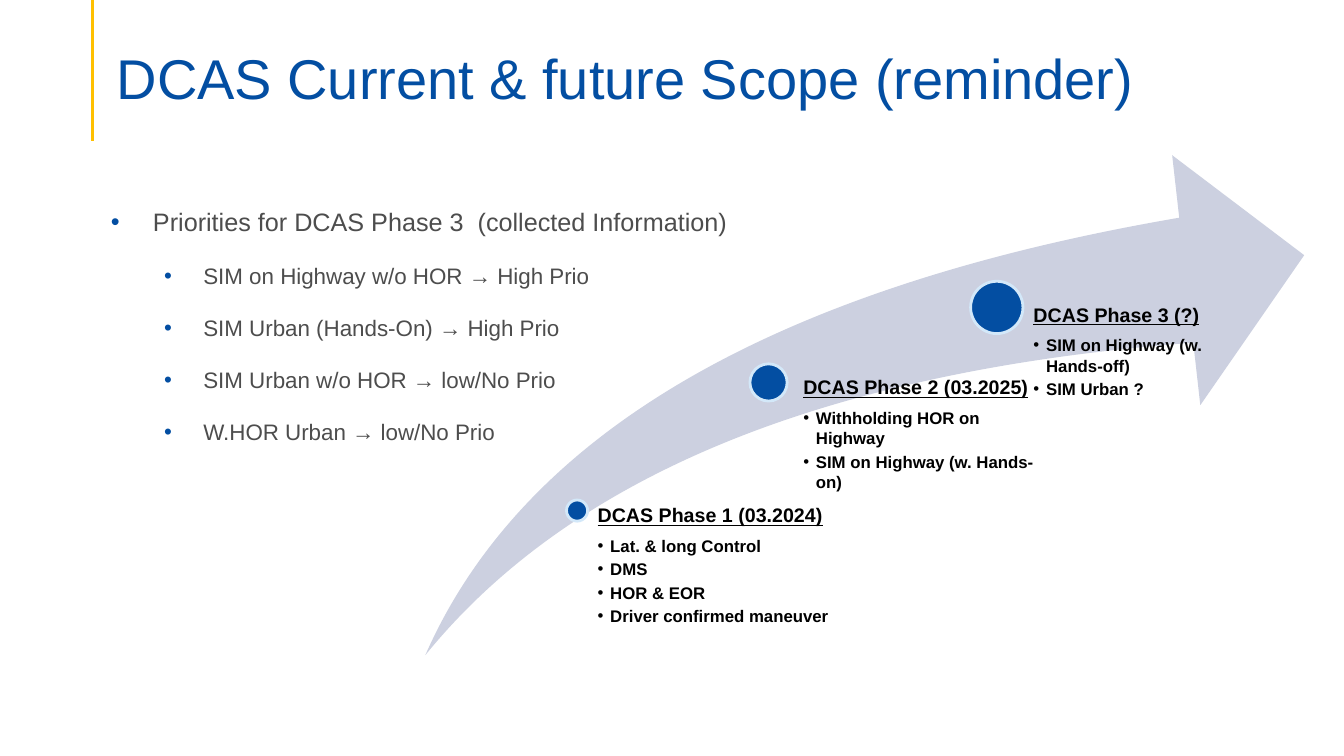
import pptx
import pptx.util
import pptx.dml.color
import pptx.enum.shapes
import pptx.enum.text
import lxml.etree

Pt = pptx.util.Pt
SHAPE = pptx.enum.shapes.MSO_SHAPE
ANCHOR = pptx.enum.text.MSO_ANCHOR

THEME = {
    "font": "Arial",
    "blue": "034EA2", "gold": "FFC000", "gray": "4D4D4D",
    "black": "000000", "swoosh": "CCD0E0", "dot_line": "D3E8F9",
    "title": 40, "body": 18, "sub": 16, "phase": 14, "item": 12,
}

TITLE = "DCAS Current & future Scope (reminder)"
HEADING = "Priorities for DCAS Phase 3  (collected Information)"
PRIORITIES = [
    "SIM on Highway w/o HOR → High Prio",
    "SIM Urban (Hands-On) → High Prio",
    "SIM Urban w/o HOR → low/No Prio",
    "W.HOR Urban → low/No Prio",
]
PHASES = [
    {"name": "DCAS Phase 1 (03.2024)",
     "items": ["Lat. & long Control", "DMS", "HOR & EOR", "Driver confirmed maneuver"],
     "dot": (412.2, 364.7, 15.1), "box": (419, 361.4, 175, 103), "inset": 7.9},
    {"name": "DCAS Phase 2 (03.2025)",
     "items": ["Withholding HOR on Highway", "SIM on Highway (w. Hands-on)"],
     "dot": (549, 273.2, 26.6), "box": (559.4, 270, 179.3, 194.4), "inset": 14.4},
    {"name": "DCAS Phase 3 (?)",
     "items": ["SIM on Highway (w. Hands-off)", "SIM Urban ?"],
     "dot": (712, 219.6, 37.4), "box": (718.6, 218.2, 147.6, 102.2), "inset": 19.6},
]


def rgb(name):
    return pptx.dml.color.RGBColor.from_string(THEME[name])


def child(parent, tag, **attrs):
    return lxml.etree.SubElement(parent, pptx.oxml.ns.qn(tag), attrs)


def add_box(s, at, insets, anchor=ANCHOR.TOP):
    tf = s.shapes.add_textbox(*map(Pt, at)).text_frame
    tf.word_wrap = True
    tf.vertical_anchor = anchor
    tf.margin_left, tf.margin_top, tf.margin_right, tf.margin_bottom = map(Pt, insets)
    return tf


def add_text(tf, text, size, color, bold=False, underline=False, first=False,
             before=0, after=0, spacing=1.0, bullet=None):
    p = tf.paragraphs[0] if first else tf.add_paragraph()
    p.space_before, p.space_after, p.line_spacing = Pt(before), Pt(after), spacing
    if bullet:
        left, hang, bullet_color = bullet
        pPr = p._p.get_or_add_pPr()
        pPr.set("marL", str(Pt(left)))
        pPr.set("indent", str(-Pt(hang)))
        child(child(pPr, "a:buClr"), "a:srgbClr", val=THEME[bullet_color])
        child(pPr, "a:buFont", typeface=THEME["font"])
        child(pPr, "a:buChar", char="•")
    r = p.add_run()
    r.text = text
    r.font.name = THEME["font"]
    r.font.size = Pt(THEME[size])
    r.font.bold = bold
    r.font.underline = underline
    r.font.color.rgb = rgb(color)


def add_shape(s, kind, at, fill, line=None):
    sp = s.shapes.add_shape(kind, *map(Pt, at))
    sp.shadow.inherit = False
    sp.fill.solid()
    sp.fill.fore_color.rgb = rgb(fill)
    if line:
        sp.line.color.rgb = rgb(line)
        sp.line.width = Pt(2)
    else:
        sp.line.fill.background()
    return sp


def main():
    prs = pptx.Presentation()
    prs.slide_width, prs.slide_height = Pt(960), Pt(540)
    s = prs.slides.add_slide(prs.slide_layouts[6])

    rule = s.shapes.add_connector(pptx.enum.shapes.MSO_CONNECTOR.STRAIGHT,
                                  Pt(66.2), Pt(0), Pt(66.2), Pt(100.8))
    rule.line.color.rgb = rgb("gold")
    rule.line.width = Pt(2.25)
    child(rule._element.spPr, "a:effectLst")

    tf = add_box(s, (76.3, 18, 828, 61.9), (7.2, 3.6, 7.2, 0), ANCHOR.BOTTOM)
    add_text(tf, TITLE, "title", "blue", first=True, spacing=0.9)

    tf = add_box(s, (66.2, 144, 464.4, 306), (7.2, 3.6, 7.2, 3.6))
    add_text(tf, HEADING, "body", "gray", first=True, bullet=(36, 30, "blue"))
    for text in PRIORITIES:
        add_text(tf, text, "sub", "gray", before=18, bullet=(72, 28, "blue"))

    swoosh = add_shape(s, SHAPE.SWOOSH_ARROW, (303.8, 110.9, 627.8, 357.1), "swoosh")
    swoosh.adjustments[0] = 0.25
    swoosh.adjustments[1] = 0.25

    for phase in PHASES:
        x, y, d = phase["dot"]
        add_shape(s, SHAPE.OVAL, (x - d / 2, y - d / 2, d, d), "blue", "dot_line")
        tf = add_box(s, phase["box"], (phase["inset"], 0, 0, 0))
        add_text(tf, phase["name"], "phase", "black", bold=True, underline=True,
                 first=True, after=6, spacing=0.9)
        for item in phase["items"]:
            add_text(tf, item, "item", "black", bold=True, after=2.4,
                     bullet=(9, 9, "black"))

    prs.save("out.pptx")


if __name__ == "__main__":
    main()
